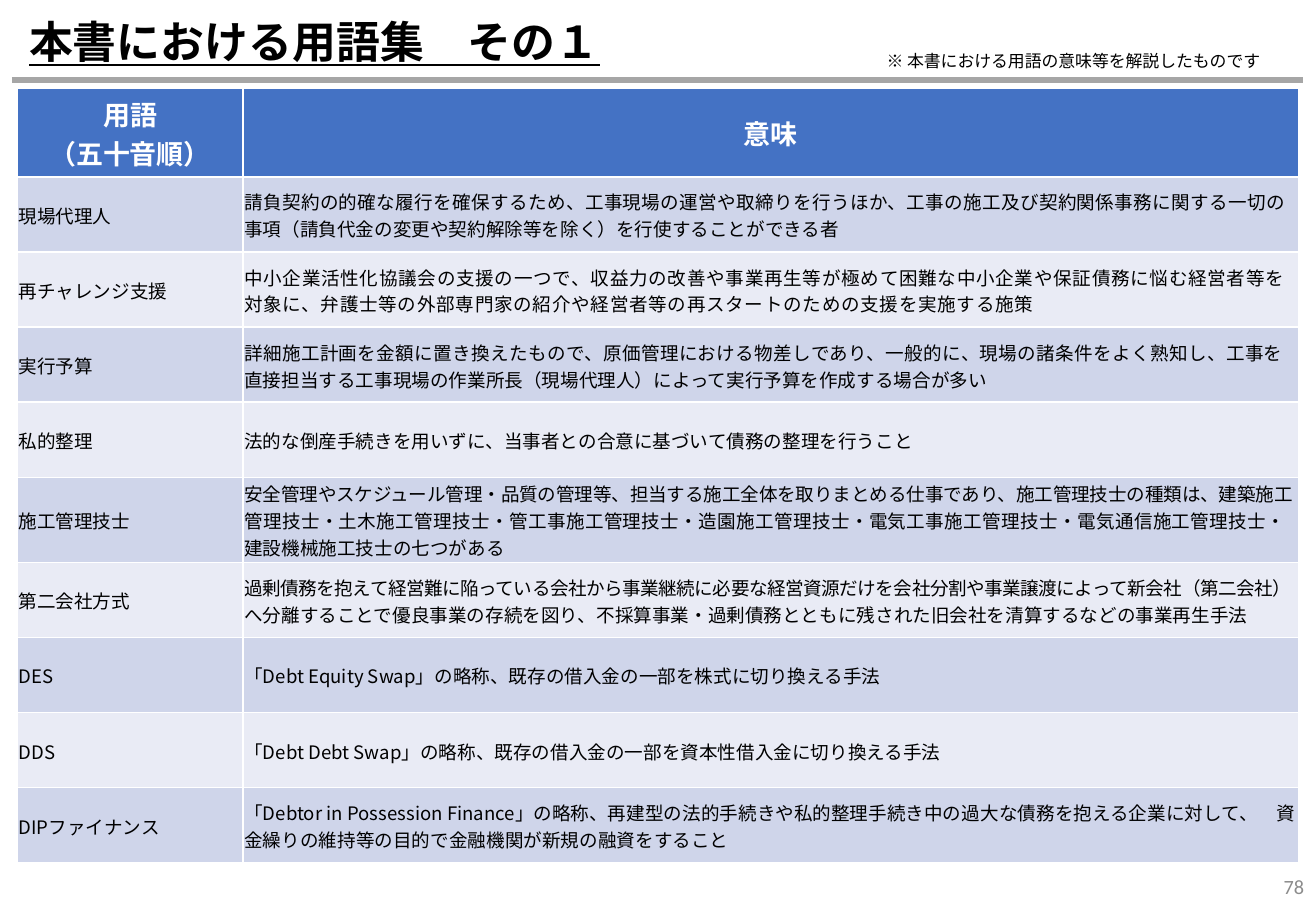
from lxml import etree
from pptx import Presentation
from pptx import util as u
from pptx.dml.color import RGBColor
from pptx.enum import shapes, text
from pptx.oxml import ns

Cm, Pt = u.Cm, u.Pt
COLORS = {"ink": "000000", "white": "FFFFFF", "header": "4472C4", "odd": "CFD5EA",
          "even": "E9EBF5", "rule": "A6A6A6", "number": "8C8C8C"}
NOTO, CALIBRI, ARIAL = "Noto Sans CJK JP", "Calibri", "Arial"

# Each entry: term, then runs of its meaning as (text, font, letter spacing in points)
GLOSSARY = [
    ("現場代理人", [
        ("請負契約の的確な履行を確保するため、工事現場の運営や取締りを行うほか、工事の施工及び契約関係事務に関する一切の", CALIBRI, 0.2),
        ("事項（請負代金の変更や契約解除等を除く）を行使することができる者", CALIBRI, 0)]),
    ("再チャレンジ支援", [
        ("中小企業活性化協議会の支援の一つで、", NOTO, 0.4),
        ("収益力の改善や事業再生等が極めて困難な中小企業や保証債務に悩む経営者等を対象に、弁護士等の外部専門家の紹介や経営者等の再スタートのための支援を実施する施策", CALIBRI, 0.4)]),
    ("実行予算", [
        ("詳細施工計画を金額に置き換えたもので、原価管理における物差しであり、一般的に、現場の諸条件をよく熟知し、工事を", CALIBRI, 0.2),
        ("直接担当する工事現場の作業所長（現場代理人）によって実行予算を作成する場合が多い", CALIBRI, 0)]),
    ("私的整理", [
        ("法的な倒産手続きを用いずに、当事者との合意に基づいて債務の整理を行うこと", NOTO, 0)]),
    ("施工管理技士", [
        ("安全管理やスケジュール管理・品質の管理等、担当する施工全体を取りまとめる仕事であり、施工管理技士の種類は、建築施工", ARIAL, -0.1),
        ("管理技士・土木施工管理技士・管工事施工管理技士・造園施工管理技士・電気工事施工管理技士・電気通信施工管理技士・", ARIAL, 0.2),
        ("建設機械施工技士の七つがある", ARIAL, 0)]),
    ("第二会社方式", [
        ("過剰債務を抱えて経営難に陥っている会社から事業継続に必要な経営資源だけを会社分割や事業譲渡によって新会社（第二会社）", NOTO, -0.3),
        ("へ分離することで優良事業の存続を図り、不採算事業・過剰債務とともに残された旧会社を清算するなどの事業再生手法", NOTO, 0)]),
    ("DES", [("「Debt Equity Swap」の略称、既存の借入金の一部を株式に切り換える手法", NOTO, 0)]),
    ("DDS", [("「Debt Debt Swap」の略称、既存の借入金の一部を資本性借入金に切り換える手法", NOTO, 0)]),
    ("DIPファイナンス", [
        ("「Debtor in Possession Finance」の略称、再建型の法的手続きや私的整理手続き中の過大な債務を抱える企業に対して、　資金繰りの維持等の目的で金融機関が新規の融資をすること", NOTO, 0)]),
]


def add_run(paragraph, words, color, spacing=0, **font_format):
    run = paragraph.add_run()
    run.text = words
    for key, value in font_format.items():
        setattr(run.font, key, value)
    run.font.color.rgb = RGBColor.from_string(COLORS[color])
    properties = run.font._element
    properties.set("lang", "ja-JP")
    if spacing:
        properties.set("spc", str(round(spacing * 100)))
    east_asian = etree.Element(ns.qn("a:ea"), typeface=NOTO)
    properties.find(ns.qn("a:latin")).addnext(east_asian)


def add_label(slide, box, words, color, align=text.PP_ALIGN.LEFT,
              anchor=text.MSO_ANCHOR.TOP, **font_format):
    frame = slide.shapes.add_textbox(*map(Cm, box)).text_frame
    frame.word_wrap = True
    frame.vertical_anchor = anchor
    frame.paragraphs[0].alignment = align
    add_run(frame.paragraphs[0], words, color, **font_format)


def add_heading(slide, left, top, width):
    add_label(slide, (left + 0.11, top, 17.9, 1.37), "本書における用語集　その１", "ink",
              name=ARIAL, size=Pt(26), bold=True, underline=True)
    # Rule under the heading
    rule_y = Cm(top + 1.5)
    rule = slide.shapes.add_connector(shapes.MSO_CONNECTOR.STRAIGHT,
                                      Cm(left), rule_y, Cm(left + width), rule_y)
    rule.line.color.rgb = RGBColor.from_string(COLORS["rule"])
    rule.line.width = Pt(3.5)
    etree.SubElement(rule._element.spPr, ns.qn("a:effectLst"))
    # Remark on the right
    add_label(slide, (left + width - 8.96, top + 0.76, 8.99, 0.69),
              "※ 本書における用語の意味等を解説したものです", "ink", name=CALIBRI, size=Pt(10))


def fill_cell(cell, fill, **cell_format):
    cell.fill.solid()
    cell.fill.fore_color.rgb = RGBColor.from_string(COLORS[fill])
    cell.vertical_anchor = text.MSO_ANCHOR.MIDDLE
    for key, value in cell_format.items():
        setattr(cell, key, value)


def add_glossary(slide, left, top, widths):
    heights = [1.85] + [1.78 if term == "施工管理技士" else 1.57 for term, _ in GLOSSARY]
    table = slide.shapes.add_table(len(heights), len(widths), Cm(left), Cm(top),
                                   Cm(sum(widths)), Cm(sum(heights))).table
    for column, width in zip(table.columns, widths):
        column.width = Cm(width)
    for row, height in zip(table.rows, heights):
        row.height = Cm(height)
    # Header row
    for cell, lines in zip(table.rows[0].cells, (["用語", "（五十音順）"], ["意味"])):
        fill_cell(cell, "header")
        frame = cell.text_frame
        for i, line in enumerate(lines):
            paragraph = frame.add_paragraph() if i else frame.paragraphs[0]
            paragraph.alignment = text.PP_ALIGN.CENTER
            add_run(paragraph, line, "white", name=CALIBRI, size=Pt(16), bold=True)
    # Terms and meanings
    inset = Cm(0.03)
    for i, (term, meaning) in enumerate(GLOSSARY, 1):
        for cell, runs in zip(table.rows[i].cells, ([(term, NOTO, 0)], meaning)):
            fill_cell(cell, "odd" if i % 2 else "even", margin_left=inset,
                      margin_top=inset, margin_right=inset, margin_bottom=0)
            for words, font, spacing in runs:
                add_run(cell.text_frame.paragraphs[0], words, "ink", spacing,
                        name=font, size=Pt(11), bold=False)


def main():
    deck = Presentation()
    deck.slide_width, deck.slide_height = Cm(27.52), Cm(19.05)
    slide = deck.slides.add_slide(deck.slide_layouts[6])
    add_heading(slide, 0.25, 0.18, 27)
    add_glossary(slide, 0.36, 1.85, (4.72, 22.07))
    # Page number
    add_label(slide, (26.16, 18.03, 1.36, 1.02), "78", "number", text.PP_ALIGN.RIGHT,
              text.MSO_ANCHOR.MIDDLE, name=CALIBRI, size=Pt(12))
    deck.save("out.pptx")


if __name__ == "__main__":
    main()
